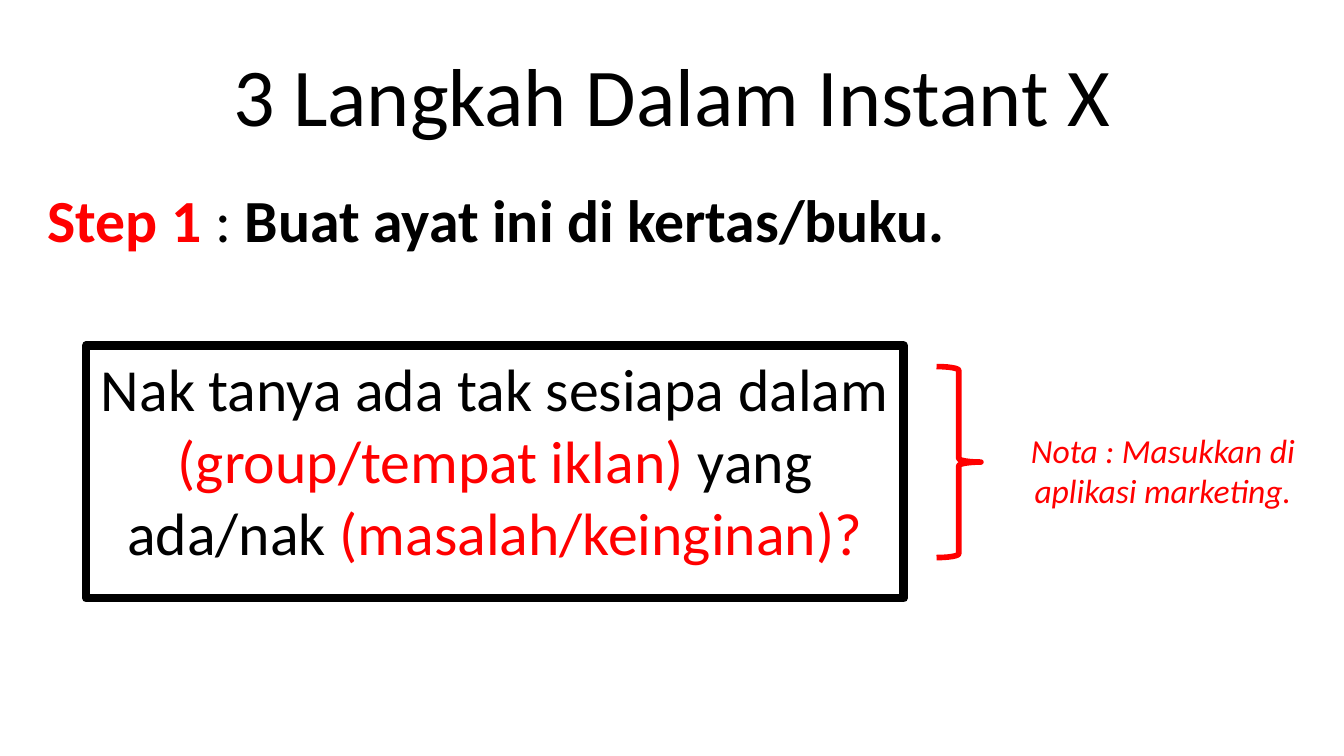
from dataclasses import dataclass

from lxml import etree
from pptx import Presentation
from pptx.dml.color import RGBColor
from pptx.enum.shapes import MSO_SHAPE
from pptx.enum.text import MSO_ANCHOR, MSO_AUTO_SIZE, PP_ALIGN
from pptx.oxml.ns import qn
from pptx.util import Cm, Pt

RECT, BRACE = MSO_SHAPE.RECTANGLE, MSO_SHAPE.RIGHT_BRACE
TOP, MIDDLE = MSO_ANCHOR.TOP, MSO_ANCHOR.MIDDLE
LEFT, CENTER = PP_ALIGN.LEFT, PP_ALIGN.CENTER
NO_FIT = MSO_AUTO_SIZE.NONE


@dataclass(frozen=True)
class Theme:
    font: str = "Calibri"
    ink: RGBColor = RGBColor(0, 0, 0)
    red: RGBColor = RGBColor(255, 0, 0)
    title: int = 44
    body: int = 32
    note: int = 18


@dataclass(frozen=True)
class Box:
    x: float
    y: float
    w: float
    h: float

    def place(self) -> tuple:
        return Cm(self.x), Cm(self.y), Cm(self.w), Cm(self.h)


@dataclass(frozen=True)
class Span:
    text: str
    color: RGBColor
    bold: bool = False


THEME = Theme()


def move(shape, box: Box) -> None:
    shape.left, shape.top, shape.width, shape.height = box.place()


def write(shape, spans: list[Span], size: int, align=CENTER,
          anchor=TOP, italic: bool = False) -> None:
    frame = shape.text_frame
    frame.word_wrap = True
    frame.auto_size = NO_FIT
    frame.vertical_anchor = anchor
    para = frame.paragraphs[0]
    para.alignment = align
    para.space_before = Pt(0)
    para.font.name = THEME.font
    para.font.size = Pt(size)
    para.font.italic = italic
    for span in spans:
        run = para.add_run()
        run.text = span.text
        run.font.color.rgb = span.color
        run.font.bold = span.bold


def plain(para) -> None:
    """Drop the bullet and its indent."""
    props = para._p.get_or_add_pPr()
    props.set("marL", "0")
    props.set("indent", "0")
    etree.SubElement(props, qn("a:buNone"))


def outline(slide, kind, box: Box, color: RGBColor, width: float):
    shape = slide.shapes.add_shape(kind, *box.place())
    shape.shadow.inherit = False
    shape.fill.background()
    shape.line.color.rgb = color
    shape.line.width = Pt(width)
    return shape


def main() -> None:
    deck = Presentation()
    deck.slide_width, deck.slide_height = Cm(25.4), Cm(14.29)
    slide = deck.slides.add_slide(deck.slide_layouts[1])
    ink, red = THEME.ink, THEME.red

    # Title
    title = slide.shapes.title
    move(title, Box(1.27, 0.58, 22.86, 2.39))
    write(title, [Span("3 Langkah Dalam Instant X", ink)], THEME.title,
          anchor=MIDDLE)

    # Step
    step = slide.placeholders[1]
    move(step, Box(0.64, 3.33, 24.13, 9.42))
    plain(step.text_frame.paragraphs[0])
    write(step, [Span("Step 1 ", red, True), Span(": ", ink),
                 Span("Buat ayat ini di kertas/buku.", ink, True)],
          THEME.body, LEFT)

    # Framed sentence
    frame = outline(slide, RECT, Box(1.63, 6.53, 15.45, 4.78), ink, 4.5)
    write(frame, [Span("Nak tanya ada tak sesiapa dalam ", ink),
                  Span("(group/tempat iklan) ", red),
                  Span("yang ada/nak ", ink),
                  Span("(masalah/keinginan)?", red)], THEME.body)

    # Brace and note
    outline(slide, BRACE, Box(17.7, 6.93, 0.84, 3.61), red, 3)
    note = slide.shapes.add_textbox(*Box(18.87, 8, 6.22, 1.8).place())
    write(note, [Span("Nota : Masukkan di aplikasi marketing.", red)],
          THEME.note, italic=True)

    deck.save("out.pptx")


if __name__ == "__main__":
    main()
